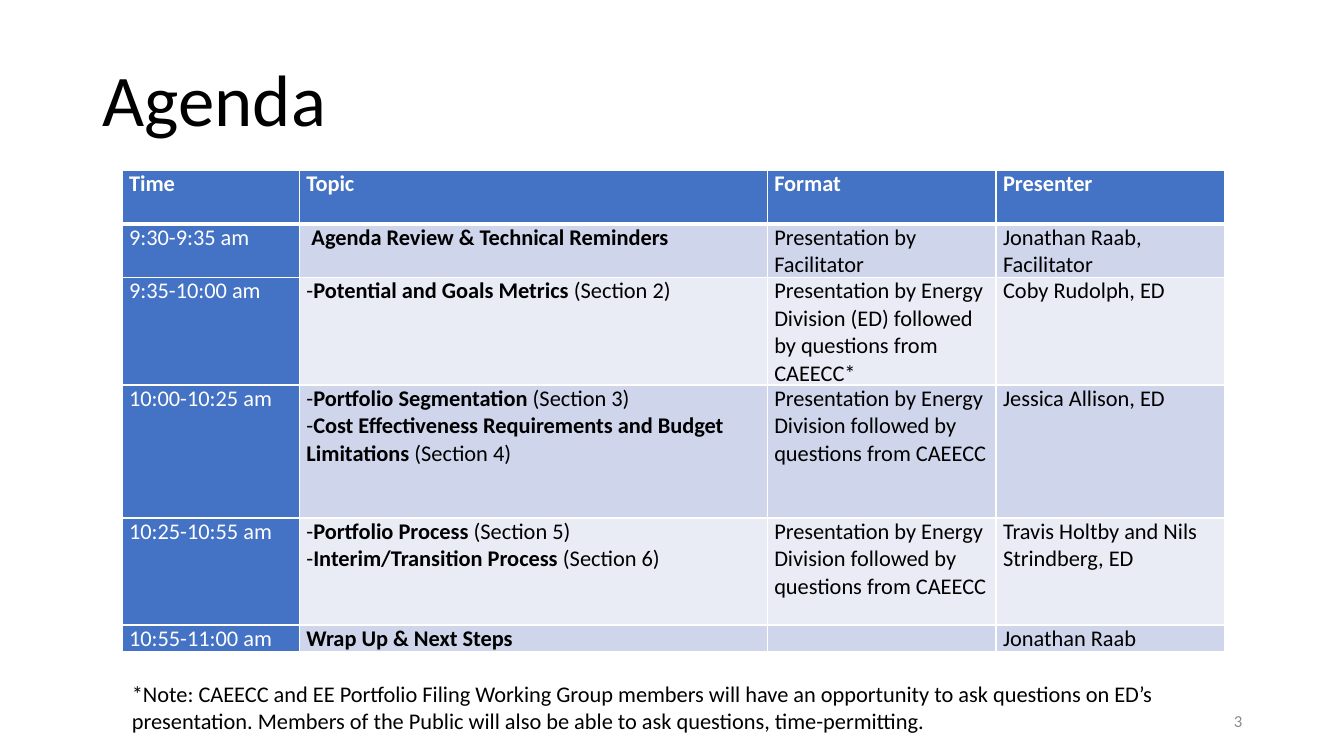
"""Build the agenda slide with its schedule table and note."""
from lxml import etree
from pptx import Presentation
from pptx.dml.color import RGBColor
from pptx.enum.text import MSO_ANCHOR, MSO_AUTO_SIZE, PP_ALIGN
from pptx.oxml import parse_xml
from pptx.oxml.ns import nsdecls, qn
from pptx.util import Inches, Pt

LEFT, RIGHT = PP_ALIGN.LEFT, PP_ALIGN.RIGHT
TOP, MIDDLE = MSO_ANCHOR.TOP, MSO_ANCHOR.MIDDLE
NO_FIT = MSO_AUTO_SIZE.NONE
FONT = "Calibri"
COLORS = {
    "white": "FFFFFF",
    "black": "000000",
    "gray": "8C8C8C",
    "blue": "4472C4",
    "dark band": "CFD5EA",
    "light band": "E9EBF5",
}


def write(frame, paragraphs, size=16, color="black", bold=False, align=LEFT, anchor=TOP, spacing=None):
    """Fill a text frame with paragraphs, each a string or a list of (text, bold) spans."""
    frame.word_wrap = True
    frame.vertical_anchor = anchor
    for index, spans in enumerate(paragraphs):
        para = frame.paragraphs[0] if index == 0 else frame.add_paragraph()
        para.alignment = align
        if spacing:
            para.line_spacing = spacing
        for text, heavy in [(spans, bold)] if isinstance(spans, str) else spans:
            span = para.add_run()
            span.text = text
            span.font.name = FONT
            span.font.size = Pt(size)
            span.font.bold = heavy
            span.font.color.rgb = RGBColor.from_string(COLORS[color])


def set_borders(cell, top=1, bottom=1):
    """Give a cell white borders, with widths in points."""
    properties = cell._tc.get_or_add_tcPr()
    widths = {"lnL": 1, "lnR": 1, "lnT": top, "lnB": bottom}
    for index, (side, width) in enumerate(widths.items()):
        properties.insert(index, parse_xml(
            f'<a:{side} {nsdecls("a")} w="{Pt(width)}"><a:solidFill>'
            f'<a:srgbClr val="{COLORS["white"]}"/></a:solidFill></a:{side}>'))


deck = Presentation()
deck.slide_width, deck.slide_height = Inches(13.33), Inches(7.5)
page = deck.slides.add_slide(deck.slide_layouts[5])

title = page.shapes.title
title.left, title.top = Inches(0.92), Inches(0.2)
title.width, title.height = Inches(11.5), Inches(1.65)
title.text_frame.auto_size = NO_FIT
write(title.text_frame, ["Agenda"], size=52, anchor=MIDDLE, spacing=0.9)

number = page.shapes.add_textbox(Inches(9.42), Inches(6.95), Inches(3), Inches(0.4))
write(number.text_frame, ["3"], size=12, color="gray", align=RIGHT, anchor=MIDDLE)

followed_by_questions = "Presentation by Energy Division followed by questions from CAEECC"
agenda = [
    (["Time"], ["Topic"], ["Format"], ["Presenter"]),
    (["9:30-9:35 am"],
     [[("\u00a0", False), ("Agenda Review & Technical Reminders", True)]],
     ["Presentation by Facilitator"],
     ["Jonathan Raab, Facilitator"]),
    (["9:35-10:00 am"],
     [[("-", False), ("Potential and Goals Metrics ", True), ("(Section 2)", False)]],
     ["Presentation by Energy Division (ED) followed by questions from CAEECC*"],
     ["Coby Rudolph, ED"]),
    (["10:00-10:25 am"],
     [[("-", False), ("Portfolio Segmentation ", True), ("(Section 3)", False)],
      [("-", False), ("Cost Effectiveness Requirements and Budget Limitations", True),
       (" (Section 4)", False)]],
     [followed_by_questions],
     ["Jessica Allison, ED"]),
    (["10:25-10:55 am"],
     [[("-", False), ("Portfolio Process ", True), ("(Section 5)", False)],
      [("-", False), ("Interim/Transition Process ", True), ("(Section 6)", False)]],
     [followed_by_questions],
     ["Travis Holtby and Nils Strindberg, ED"]),
    (["10:55-11:00 am"], [[("Wrap Up & Next Steps", True)]], [], ["Jonathan Raab"]),
]
column_widths = [1.76, 4.64, 2.27, 2.27]
row_heights = [0.53, 0.53, 1.06, 1.32, 1.06, 0.26]

schedule = page.shapes.add_table(
    len(agenda), len(column_widths), Inches(1.21), Inches(1.69), Inches(10.94), Inches(4.78)).table
schedule.first_col = True
for column, width in zip(schedule.columns, column_widths):
    column.width = Inches(width)
for row, height in zip(schedule.rows, row_heights):
    row.height = Inches(height)

for row_index, entries in enumerate(agenda):
    band = "dark band" if row_index % 2 else "light band"
    for column_index, paragraphs in enumerate(entries):
        cell = schedule.cell(row_index, column_index)
        heading = row_index == 0 or column_index == 0
        cell.margin_left = cell.margin_right = Inches(0.07)
        cell.margin_top = cell.margin_bottom = 0
        cell.fill.solid()
        cell.fill.fore_color.rgb = RGBColor.from_string(COLORS["blue" if heading else band])
        set_borders(cell, top=3 if row_index == 1 else 1, bottom=3 if row_index == 0 else 1)
        write(cell.text_frame, paragraphs, color="white" if heading else "black", bold=row_index == 0)
        if not paragraphs:
            etree.SubElement(cell.text_frame.paragraphs[0]._p, qn("a:endParaRPr"), sz="1600")

note = page.shapes.add_textbox(Inches(1.21), Inches(6.7), Inches(10.94), Inches(0.64))
write(note.text_frame, [
    "*Note: CAEECC and EE Portfolio Filing Working Group members will have an opportunity to ask "
    "questions on ED’s presentation. Members of the Public will also be able to ask questions, "
    "time-permitting."])

deck.save("out.pptx")
